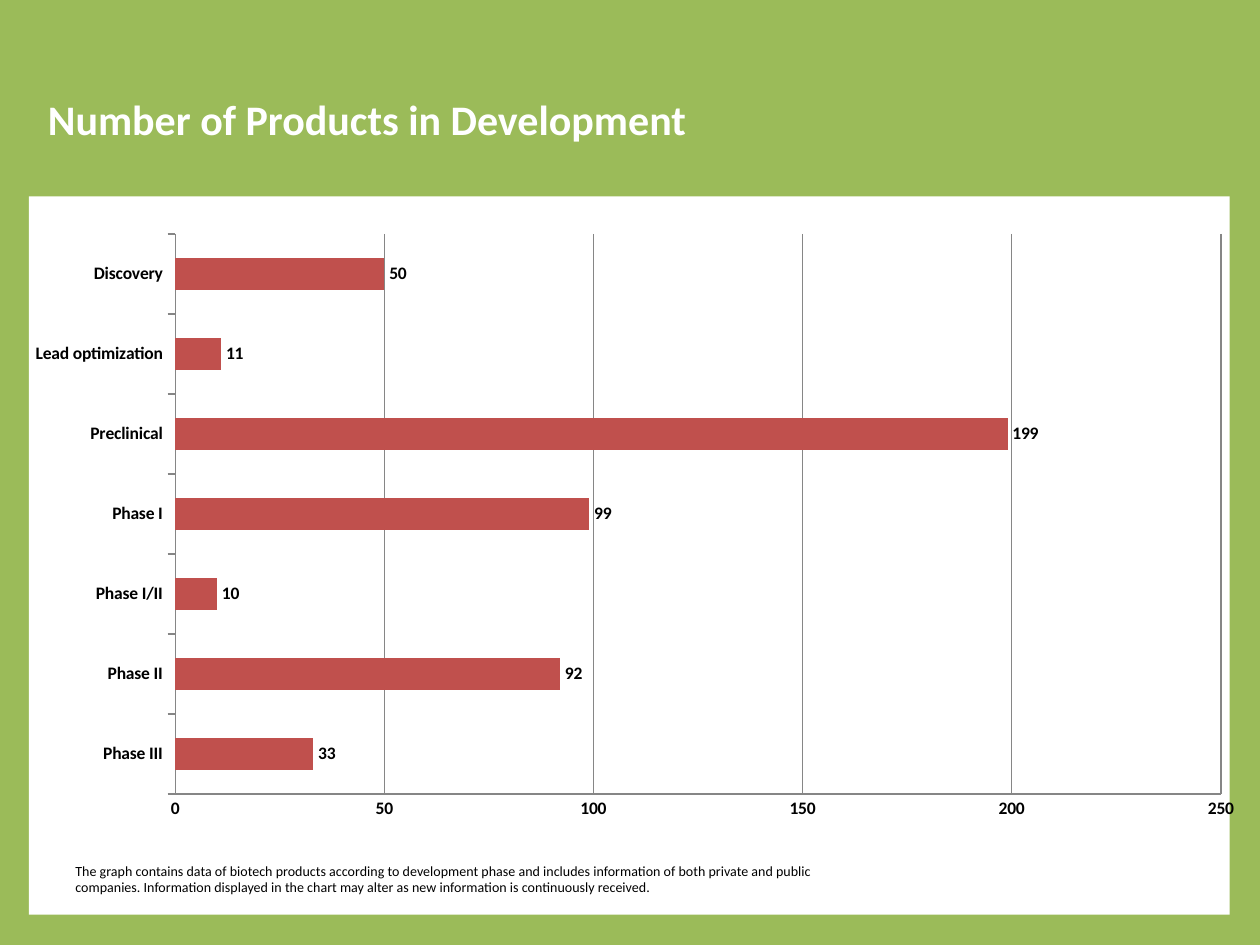
from lxml import etree
from pptx import Presentation
from pptx.chart.data import CategoryChartData
from pptx.dml.color import RGBColor
from pptx.enum.chart import XL_CHART_TYPE, XL_LABEL_POSITION, XL_TICK_MARK
from pptx.enum.shapes import MSO_SHAPE
from pptx.enum.text import MSO_ANCHOR, PP_ALIGN
from pptx.oxml.ns import qn
from pptx.util import Inches, Pt

BAR_CLUSTERED = XL_CHART_TYPE.BAR_CLUSTERED
OUTSIDE_END = XL_LABEL_POSITION.OUTSIDE_END
TICK_OUT, TICK_NONE = XL_TICK_MARK.OUTSIDE, XL_TICK_MARK.NONE
RECTANGLE = MSO_SHAPE.RECTANGLE
MIDDLE = MSO_ANCHOR.MIDDLE
LEFT = PP_ALIGN.LEFT

GREEN = RGBColor(0x9B, 0xBB, 0x59)
RED = RGBColor(0xC0, 0x50, 0x4D)
GRAY = RGBColor(0x86, 0x86, 0x86)
WHITE = RGBColor(0xFF, 0xFF, 0xFF)
BLACK = RGBColor(0x00, 0x00, 0x00)

PRODUCTS = {
    "Phase III": 33,
    "Phase II": 92,
    "Phase I/II": 10,
    "Phase I": 99,
    "Preclinical": 199,
    "Lead optimization": 11,
    "Discovery": 50,
}
PLOT_LAYOUT = {
    "layoutTarget": "inner", "xMode": "edge", "yMode": "edge",
    "x": 0.14, "y": 0.06, "w": 0.83, "h": 0.87,
}


def style_font(font, size, color, bold=False):
    values = {"name": "Calibri", "size": Pt(size), "bold": bold}
    for attribute, value in values.items():
        setattr(font, attribute, value)
    font.color.rgb = color


presentation = Presentation()
presentation.slide_width = Inches(10)
presentation.slide_height = Inches(7.5)
slide = presentation.slides.add_slide(presentation.slide_layouts[5])
slide.background.fill.solid()
slide.background.fill.fore_color.rgb = GREEN

# Title
title = slide.shapes.title
title.left, title.top = Inches(0.28), Inches(0.32)
title.width, title.height = Inches(9), Inches(1.25)
title.text_frame.text = "Number of Products in Development"
title.text_frame.vertical_anchor = MIDDLE
heading = title.text_frame.paragraphs[0]
heading.alignment = LEFT
style_font(heading.font, 24, WHITE, bold=True)

# White panel
panel = slide.shapes.add_shape(
    RECTANGLE, Inches(0.23), Inches(1.56), Inches(9.53), Inches(5.7))
panel.shadow.inherit = False
panel.fill.solid()
panel.fill.fore_color.rgb = WHITE
panel.line.fill.background()

# Footnote
footnote = slide.shapes.add_textbox(
    Inches(0.5), Inches(6.64), Inches(6.39), Inches(0.67)).text_frame
footnote.word_wrap = True
footnote.vertical_anchor = MIDDLE
footnote.text = (
    "The graph contains data of biotech products according to development "
    "phase and includes information of both private and public companies. "
    "Information displayed in the chart may alter as new information is "
    "continuously received.")
style_font(footnote.paragraphs[0].font, 8, BLACK)

# Products by phase
chart_data = CategoryChartData()
chart_data.categories = list(PRODUCTS)
chart_data.add_series("Series 1", list(PRODUCTS.values()))
chart = slide.shapes.add_chart(
    BAR_CLUSTERED, Inches(-0.01), Inches(1.55), Inches(10), Inches(5.11),
    chart_data).chart
chart.has_title = False
chart.has_legend = False
style_font(chart.font, 10, BLACK)

plot = chart.plots[0]
plot.gap_width = 150
plot.vary_by_categories = False
bars = plot.series[0]
bars.format.fill.solid()
bars.format.fill.fore_color.rgb = RED
labels = bars.data_labels
labels.show_value = True
labels.position = OUTSIDE_END
style_font(labels.font, 10, BLACK, bold=True)

phase_axis, count_axis = chart.category_axis, chart.value_axis
for axis, tick in ((phase_axis, TICK_OUT), (count_axis, TICK_NONE)):
    axis.major_tick_mark = tick
    axis.minor_tick_mark = TICK_NONE
    axis.format.line.color.rgb = GRAY
    axis.format.line.width = Pt(0.75)
    style_font(axis.tick_labels.font, 10, BLACK, bold=True)
phase_axis.has_major_gridlines = False
count_axis.minimum_scale, count_axis.maximum_scale = 0, 250
count_axis.major_unit = 50
count_axis.has_major_gridlines = True
count_axis.major_gridlines.format.line.color.rgb = GRAY
count_axis.major_gridlines.format.line.width = Pt(0.75)

# Fixed inner plot area
plot_area = chart.element.find(".//" + qn("c:plotArea"))
for automatic_layout in plot_area.findall(qn("c:layout")):
    plot_area.remove(automatic_layout)
layout = etree.Element(qn("c:layout"))
plot_area.insert(0, layout)
manual_layout = etree.SubElement(layout, qn("c:manualLayout"))
for tag, value in PLOT_LAYOUT.items():
    etree.SubElement(manual_layout, qn("c:" + tag), val=str(value))

presentation.save("out.pptx")
